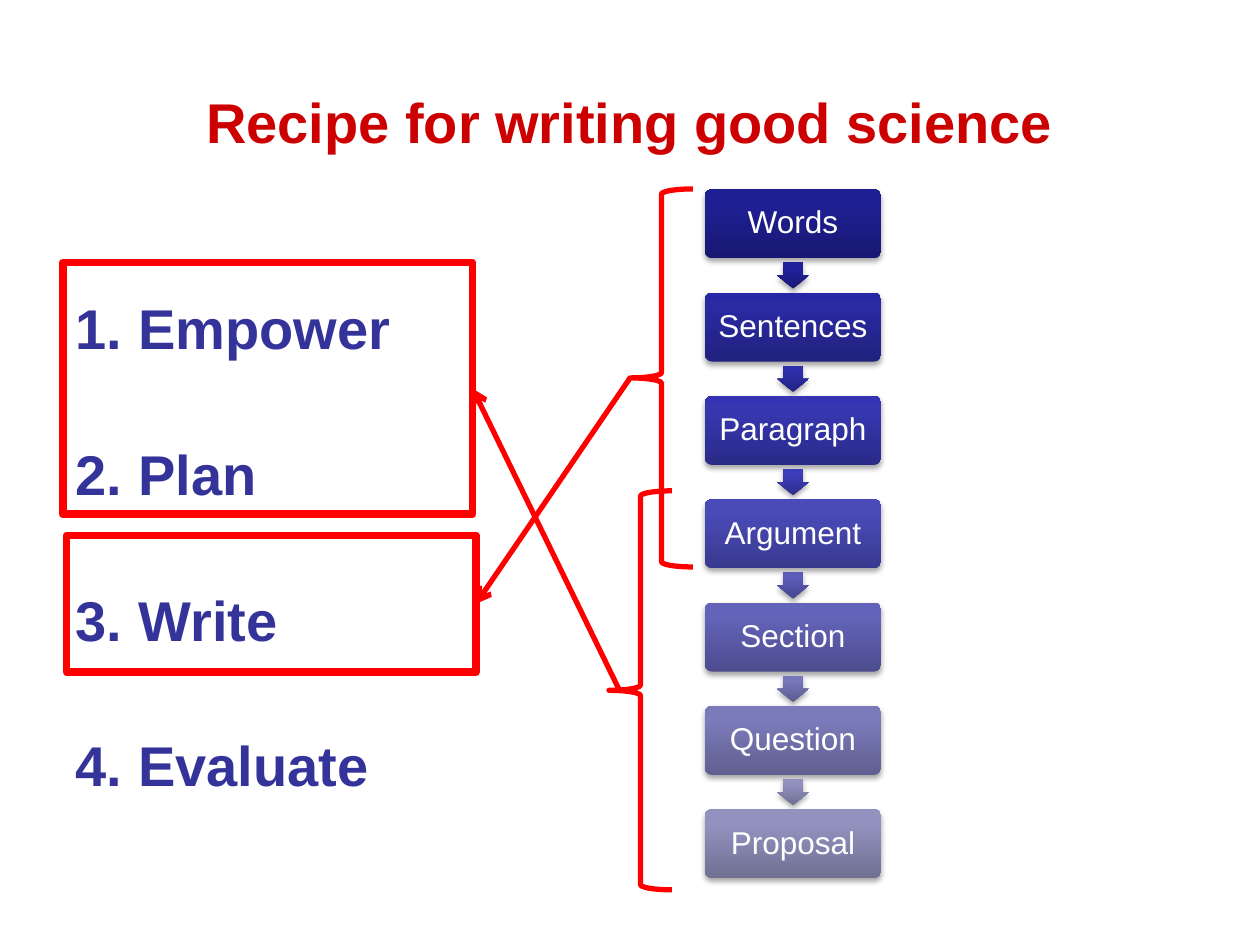
from dataclasses import dataclass
from pptx import Presentation
from pptx.dml.color import RGBColor
from pptx.enum.shapes import MSO_CONNECTOR, MSO_SHAPE
from pptx.enum.text import MSO_ANCHOR, PP_ALIGN
from pptx.oxml import parse_xml
from pptx.oxml.ns import nsdecls, qn
from pptx.util import Pt


@dataclass(frozen=True)
class Theme:
    font: str = "Arial"
    title: str = "CC0000"
    body: str = "333399"
    label: str = "FFFFFF"
    mark: str = "FF0000"
    big: int = 32
    small: int = 18
    boxes: tuple = (
        ("181872", "1F1F94", "1D1D97"),
        ("21217E", "2A2AA3", "2828A6"),
        ("2A2A88", "3737B1", "3434B4"),
        ("39398E", "4A4AB8", "4848BB"),
        ("4C4C8E", "6363B9", "6262BB"),
        ("5F5F90", "7B7BBB", "7B7BBD"),
        ("707093", "9292BF", "9191C0"),
    )
    arrows: tuple = (
        ("191978", "21219C", "1F1F9F"),
        ("232385", "2E2EAC", "2C2CAF"),
        ("2F2F8F", "3D3DBA", "3B3BBD"),
        ("46468F", "5B5BBA", "5A5ABC"),
        ("5C5C90", "7777BB", "7676BD"),
        ("6F6F93", "9191BF", "9090C1"),
    )


class Deck:
    def __init__(self, theme):
        self.theme = theme
        self.file = Presentation()
        self.file.slide_width, self.file.slide_height = Pt(720), Pt(540)
        self.slide = self.file.slides.add_slide(self.file.slide_layouts[6])

    def run(self, para, text, size, color, bold=False):
        run = para.add_run()
        run.text = text
        font = run.font
        font.name, font.size, font.bold = self.theme.font, Pt(size), bold
        font.color.rgb = RGBColor.from_string(color)

    def box(self, left, top, width, height):
        box = self.slide.shapes.add_textbox(Pt(left), Pt(top), Pt(width), Pt(height))
        frame = box.text_frame
        frame.word_wrap = True
        return frame

    def title(self, text, *area):
        frame = self.box(*area)
        frame.vertical_anchor = MSO_ANCHOR.MIDDLE
        para = frame.paragraphs[0]
        para.alignment = PP_ALIGN.CENTER
        self.run(para, text, self.theme.big, self.theme.title, True)

    def list(self, items, *area):
        frame = self.box(*area)
        for i, item in enumerate(items):
            para = frame.add_paragraph() if i else frame.paragraphs[0]
            para.line_spacing = 2.0
            para.space_before = Pt(6.4 if i else 0)
            props = para._p.get_or_add_pPr()
            props.set("marL", str(Pt(36)))
            props.set("indent", str(-Pt(36)))
            props.append(parse_xml(f'<a:buFont {nsdecls("a")} typeface="+mj-lt"/>'))
            props.append(parse_xml(f'<a:buAutoNum {nsdecls("a")} type="arabicPeriod"/>'))
            self.run(para, item, self.theme.big, self.theme.body, True)

    def shape(self, kind, left, top, width, height):
        return self.slide.shapes.add_shape(kind, Pt(left), Pt(top), Pt(width), Pt(height))

    def stroke(self, line, weight):
        line.color.rgb = RGBColor.from_string(self.theme.mark)
        line.width = Pt(weight)

    def frame(self, kind, weight, *area):
        shape = self.shape(kind, *area)
        shape.shadow.inherit = False
        shape.fill.background()
        self.stroke(shape.line, weight)
        return shape

    def shade(self, shape, colors):
        shape.line.fill.background()
        stops = "".join(
            f'<a:gs pos="{pos}"><a:srgbClr val="{color}"/></a:gs>'
            for pos, color in zip((0, 80000, 100000), colors)
        )
        line = shape._element.spPr.find(qn("a:ln"))
        line.addprevious(parse_xml(
            f'<a:gradFill {nsdecls("a")} rotWithShape="0"><a:gsLst>{stops}</a:gsLst>'
            '<a:lin ang="16200000" scaled="0"/></a:gradFill>'))
        line.addnext(parse_xml(
            f'<a:effectLst {nsdecls("a")}><a:outerShdw blurRad="{Pt(3.1)}" '
            f'dist="{Pt(1.8)}" dir="5400000" rotWithShape="0"><a:srgbClr val="000000">'
            '<a:alpha val="35000"/></a:srgbClr></a:outerShdw></a:effectLst>'))

    def step(self, text, colors, *area):
        shape = self.shape(MSO_SHAPE.ROUNDED_RECTANGLE, *area)
        shape.adjustments[0] = 0.1
        self.shade(shape, colors)
        frame = shape.text_frame
        frame.word_wrap = True
        frame.vertical_anchor = MSO_ANCHOR.MIDDLE
        frame.margin_left = frame.margin_right = Pt(6)
        frame.margin_top = frame.margin_bottom = Pt(6)
        para = frame.paragraphs[0]
        para.alignment = PP_ALIGN.CENTER
        para.line_spacing = 0.9
        self.run(para, text, self.theme.small, self.theme.label)

    def arrow(self, colors, x, y, width, height):
        shape = self.shape(MSO_SHAPE.RIGHT_ARROW, x - width / 2, y - height / 2, width, height)
        shape.rotation = 90
        shape.adjustments[0], shape.adjustments[1] = 0.6, 0.5
        self.shade(shape, colors)

    def link(self, start, end, target, source=None):
        points = [Pt(value) for value in (*start, *end)]
        line = self.slide.shapes.add_connector(MSO_CONNECTOR.STRAIGHT, *points)
        if source is not None:
            line.begin_connect(source, 1)
        line.end_connect(target, 3)
        self.stroke(line.line, 3)
        line.line._get_or_add_ln().append(
            parse_xml(f'<a:tailEnd {nsdecls("a")} type="arrow"/>'))
        line._element.spPr.append(parse_xml(f'<a:effectLst {nsdecls("a")}/>'))


def main():
    theme = Theme()
    deck = Deck(theme)
    deck.title("Recipe for writing good science", 36, 24, 648, 90)
    deck.list(("Empower", "Plan", "Write", "Evaluate"), 36, 126, 648, 356)
    plan = deck.frame(MSO_SHAPE.RECTANGLE, 4.5, 36, 150, 234, 144)

    steps = ("Words", "Sentences", "Paragraph", "Argument", "Section", "Question", "Proposal")
    left, top, width, height, pitch = 402.75, 108.2, 100.8, 39.4, 59.05
    for i, text in enumerate(steps):
        y = top + i * pitch
        deck.step(text, theme.boxes[i], left, y, width, height)
        if i < len(theme.arrows):
            deck.arrow(theme.arrows[i], left + width / 2, y + (height + pitch) / 2, 15, 18)

    write = deck.frame(MSO_SHAPE.RECTANGLE, 4.5, 38, 306, 234, 78)
    upper = deck.frame(MSO_SHAPE.LEFT_BRACE, 3, 360, 108, 36, 216)
    deck.link((360, 216), (272, 345), write, upper)
    deck.frame(MSO_SHAPE.LEFT_BRACE, 3, 348, 280.5, 36, 228)
    deck.link((354, 394.5), (270, 222), plan)
    deck.file.save("out.pptx")


if __name__ == "__main__":
    main()
